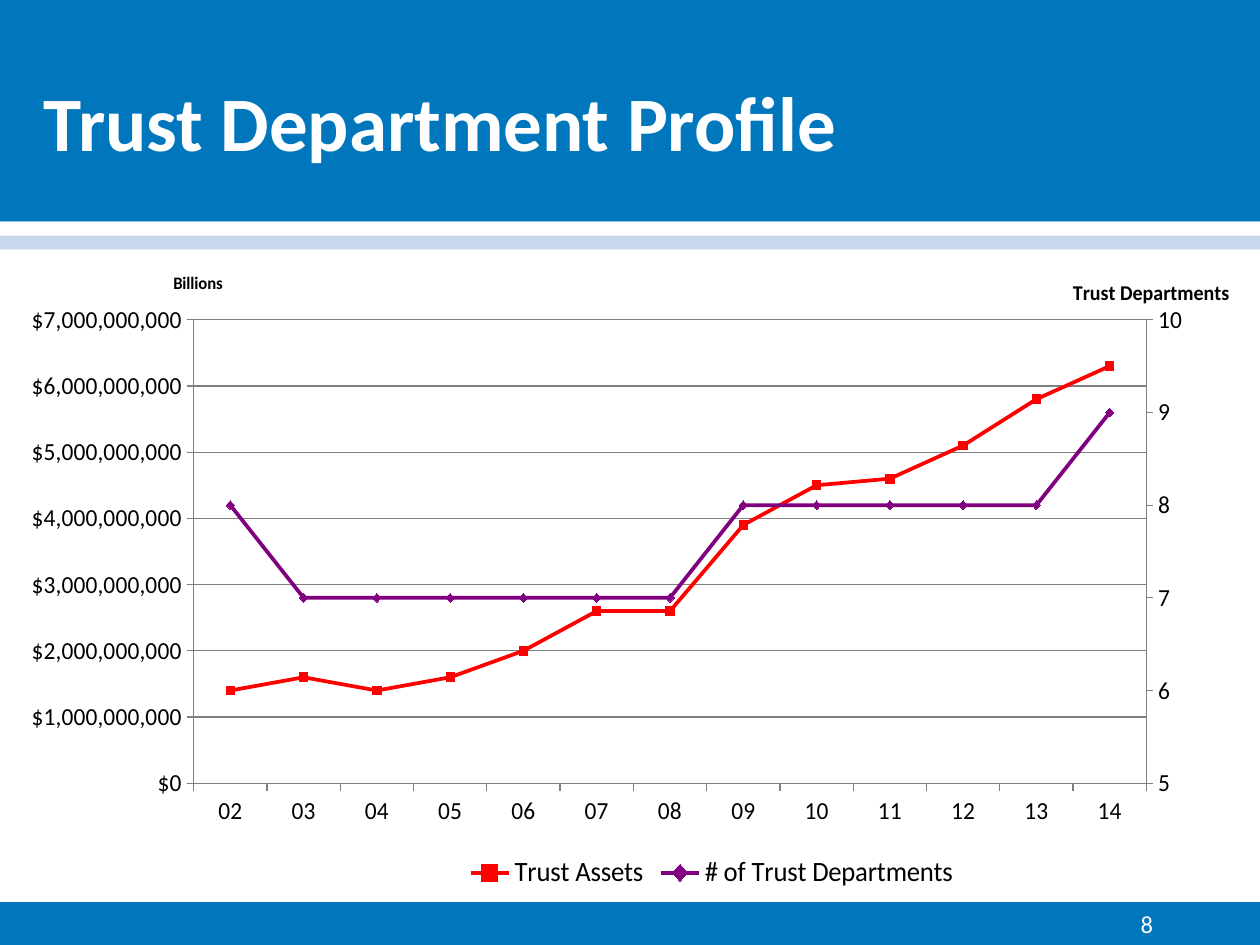
from copy import deepcopy

from lxml.etree import SubElement
from pptx import Presentation
from pptx.chart.axis import ValueAxis
from pptx.chart.data import CategoryChartData
from pptx.dml.color import RGBColor
from pptx.enum.chart import XL_CHART_TYPE, XL_LEGEND_POSITION, XL_MARKER_STYLE, XL_TICK_MARK
from pptx.enum.shapes import MSO_SHAPE
from pptx.enum.text import MSO_ANCHOR, PP_ALIGN
from pptx.oxml.ns import qn
from pptx.util import Inches, Pt

FONT = "Calibri"
BLUE = RGBColor(0x00, 0x76, 0xBC)
PALE = RGBColor(0xC8, 0xD7, 0xEE)
WHITE = RGBColor(0xFF, 0xFF, 0xFF)
BLACK = RGBColor(0, 0, 0)
GRAY = RGBColor(0x80, 0x80, 0x80)
RED = RGBColor(0xFF, 0, 0)
PURPLE = RGBColor(0x80, 0, 0x80)
BACKGROUND = RGBColor(0x96, 0x96, 0x96)

# top, height, colour of full-width bands
BANDS = [
    (1.5, 6, WHITE),
    (7.16, 0.34, BLUE),
    (0, 1.76, BLUE),
    (1.76, 0.11, WHITE),
    (1.87, 0.11, PALE),
]
YEARS = [f"{year:02d}" for year in range(2, 15)]
ASSETS_BILLIONS = [1.4, 1.6, 1.4, 1.6, 2.0, 2.6, 2.6, 3.9, 4.5, 4.6, 5.1, 5.8, 6.3]
DEPARTMENTS = [8, 7, 7, 7, 7, 7, 7, 8, 8, 8, 8, 8, 9]
SERIES = [
    ("Trust Assets", [round(v * 10**9) for v in ASSETS_BILLIONS], RED, XL_MARKER_STYLE.SQUARE),
    ("# of Trust Departments", DEPARTMENTS, PURPLE, XL_MARKER_STYLE.DIAMOND),
]


def style_font(font, size, color=BLACK, bold=False):
    font.name, font.size, font.bold = FONT, Pt(size), bold
    font.color.rgb = color


def add_text(slide, box, text, size, anchor, align, bold=False):
    tf = slide.shapes.add_textbox(*map(Inches, box)).text_frame
    tf.word_wrap = True
    tf.vertical_anchor = anchor
    p = tf.paragraphs[0]
    p.alignment = align
    r = p.add_run()
    r.text = text
    style_font(r.font, size, WHITE, bold)


def set_layout(parent, after, **place):
    """Place a chart part by fractions of the chart; after is the tag it follows."""
    for old in parent.findall(qn("c:layout")):
        parent.remove(old)
    layout = SubElement(parent, qn("c:layout"))
    manual = SubElement(layout, qn("c:manualLayout"))
    if "w" in place:
        SubElement(manual, qn("c:layoutTarget")).set("val", "inner")
    for mode in ("xMode", "yMode"):
        SubElement(manual, qn(f"c:{mode}")).set("val", "edge")
    for key, value in place.items():
        SubElement(manual, qn(f"c:{key}")).set("val", str(value))
    if after:
        parent.find(qn(after)).addnext(layout)
    else:
        parent.insert(0, layout)


def style_axis(axis):
    axis.major_tick_mark = XL_TICK_MARK.OUTSIDE
    axis.minor_tick_mark = XL_TICK_MARK.NONE
    axis.format.line.color.rgb = GRAY
    style_font(axis.tick_labels.font, 14)


def style_value_axis(axis, low, high, step, fmt, title, size, x, y):
    style_axis(axis)
    axis.minimum_scale, axis.maximum_scale, axis.major_unit = low, high, step
    axis.tick_labels.number_format = fmt
    axis.tick_labels.number_format_is_linked = False
    tf = axis.axis_title.text_frame
    r = tf.paragraphs[0].add_run()
    r.text = title
    style_font(r.font, size, bold=True)
    body = axis.axis_title._element.find(".//" + qn("a:bodyPr"))
    body.set("rot", "0")
    body.set("vert", "horz")
    set_layout(axis.axis_title._element, "c:tx", x=x, y=y)


def add_right_axis(chart):
    """Move the last series to a second line plot with its own axis on the right."""
    area = chart._chartSpace.find(".//" + qn("c:plotArea"))
    left_plot = area.find(qn("c:lineChart"))
    cat, val = area.find(qn("c:catAx")), area.find(qn("c:valAx"))
    right_plot, right_cat, right_val = map(deepcopy, (left_plot, cat, val))
    left_plot.remove(left_plot.findall(qn("c:ser"))[-1])
    right_plot.remove(right_plot.find(qn("c:ser")))
    left_plot.addnext(right_plot)
    val.addnext(right_val)
    right_val.addnext(right_cat)

    new_ids = {cat.find(qn("c:axId")).get("val"): "5001",
               val.find(qn("c:axId")).get("val"): "5002"}
    for part in (right_plot, right_cat, right_val):
        for ref in part.findall(qn("c:axId")) + part.findall(qn("c:crossAx")):
            ref.set("val", new_ids[ref.get("val")])
    right_cat.find(qn("c:delete")).set("val", "1")
    right_val.find(qn("c:axPos")).set("val", "r")
    right_val.find(qn("c:crosses")).set("val", "max")
    return ValueAxis(right_val)


def add_trust_chart(slide):
    data = CategoryChartData()
    data.categories = YEARS
    for name, values, _, _ in SERIES:
        data.add_series(name, values)
    box = map(Inches, (0.25, 1.92, 9.72, 5.19))
    chart = slide.shapes.add_chart(XL_CHART_TYPE.LINE_MARKERS, *box, data).chart
    style_font(chart.font, 10)
    chart.has_title = False
    chart.plots[0].vary_by_categories = False

    for series, (_, _, color, marker) in zip(chart.plots[0].series, SERIES):
        series.smooth = False
        series.format.line.color.rgb = color
        series.format.line.width = Pt(2.25)
        series.marker.style, series.marker.size = marker, 5
        series.marker.format.fill.solid()
        series.marker.format.fill.fore_color.rgb = color
        series.marker.format.line.color.rgb = color

    left = chart.value_axis  # taken while it is the only value axis
    right = add_right_axis(chart)
    right.has_major_gridlines = False
    left.has_major_gridlines = True
    left.major_gridlines.format.line.color.rgb = GRAY
    style_axis(chart.category_axis)
    style_value_axis(left, 0, 7 * 10**9, 10**9, '"$"#,##0', "Billions", 10, 0.07, 0.04)
    style_value_axis(right, 5, 10, 1, "General", "Trust Departments", 12, 0.84, 0.05)

    chart.has_legend = True
    legend = chart.legend
    legend.position = XL_LEGEND_POSITION.BOTTOM
    legend.include_in_layout = False
    style_font(legend.font, 16)
    set_layout(legend._element, "c:legendPos", x=0.32, y=0.93)
    area = chart._chartSpace.find(".//" + qn("c:plotArea"))
    set_layout(area, None, x=0.09, y=0.119, w=0.816, h=0.709)


def main():
    prs = Presentation()
    prs.slide_width, prs.slide_height = Inches(10), Inches(7.5)
    slide = prs.slides.add_slide(prs.slide_layouts[6])
    slide.background.fill.solid()
    slide.background.fill.fore_color.rgb = BACKGROUND
    for top, height, color in BANDS:
        s = slide.shapes.add_shape(MSO_SHAPE.RECTANGLE, 0, Inches(top), Inches(10), Inches(height))
        s.shadow.inherit = False
        s.fill.solid()
        s.fill.fore_color.rgb = color
        s.line.fill.background()
    add_text(slide, (0.25, 0.33, 9.42, 1.25), "Trust Department Profile", 44,
             MSO_ANCHOR.MIDDLE, PP_ALIGN.LEFT, bold=True)
    add_text(slide, (7.17, 7, 2.08, 0.5), "8", 14, MSO_ANCHOR.BOTTOM, PP_ALIGN.RIGHT)
    add_trust_chart(slide)
    prs.save("out.pptx")


if __name__ == "__main__":
    main()
